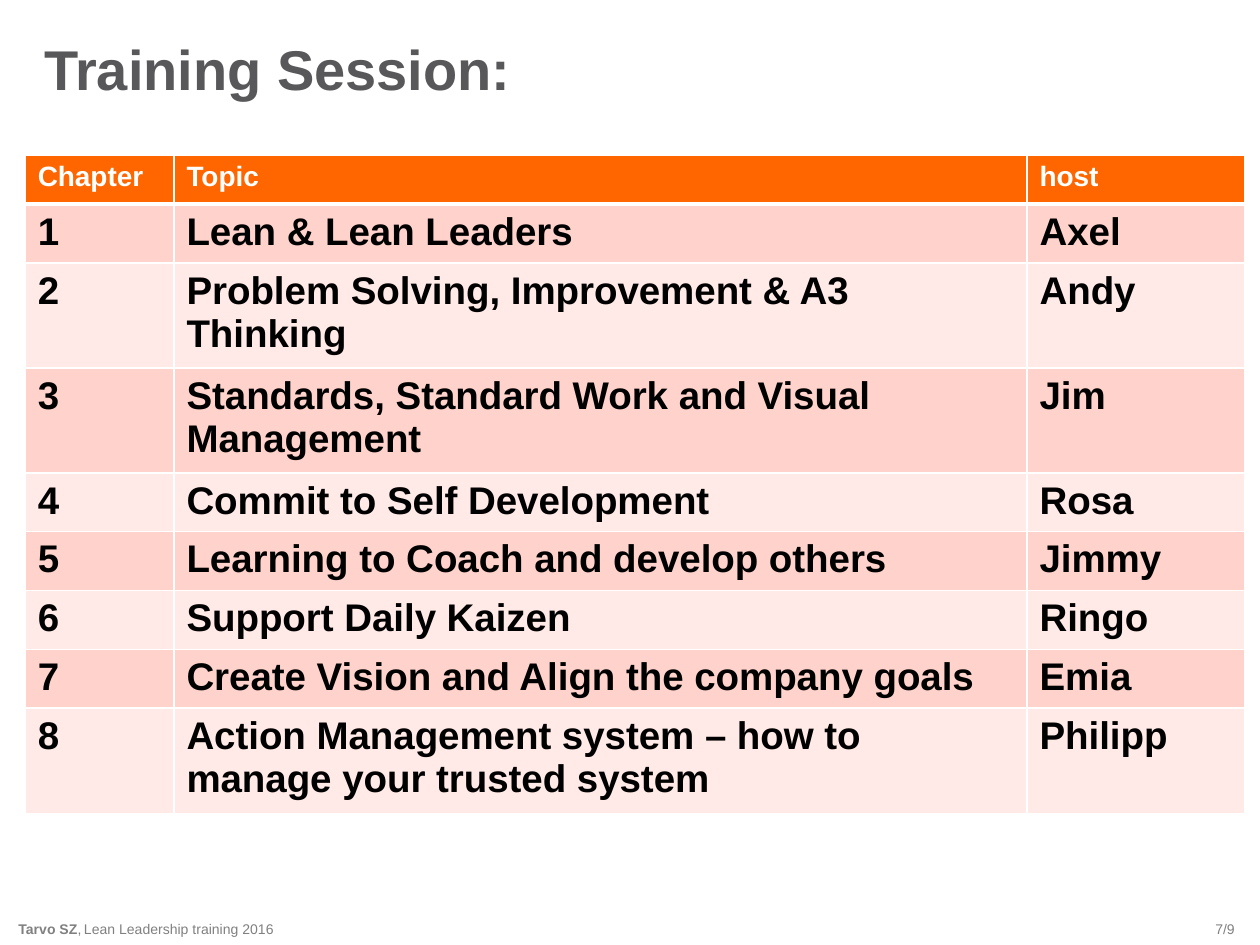
from lxml import etree
from pptx import Presentation
from pptx.dml.color import RGBColor
from pptx.enum import text
from pptx.oxml import ns
from pptx.util import Pt

FONT = "Arial"
GREY, WHITE, BLACK = "808080", "FFFFFF", "000000"
HEADER_FILL = "FF6600"
BAND_FILLS = ("FFD3CC", "FFEAE7")
HEADINGS = ("Chapter", "Topic", "host")
SESSIONS = (
    ("Lean & Lean Leaders", "Axel"),
    ("Problem Solving, Improvement & A3 Thinking", "Andy"),
    ("Standards, Standard Work and Visual Management", "Jim"),
    ("Commit to Self Development", "Rosa"),
    ("Learning to Coach and develop others", "Jimmy"),
    ("Support Daily Kaizen", "Ringo"),
    ("Create Vision and Align the company goals", "Emia"),
    ("Action Management system – how to manage your trusted system", "Philipp"),
)
TWO_LINE_CHAPTERS = (2, 3, 8)
COLUMN_WIDTHS = (85, 487.5, 124.5)
HEADER_HEIGHT, ONE_LINE, TWO_LINES = 28, 31.8, 56.4


def rgb(value):
    return RGBColor.from_string(value)


def add_run(paragraph, words, size, color, bold=False):
    run = paragraph.add_run()
    run.text = words
    run.font.name = FONT
    run.font.size = Pt(size)
    run.font.bold = bold
    run.font.color.rgb = rgb(color)


def add_label(slide, left, top, width, height, runs, size, color,
              align=text.PP_ALIGN.LEFT, inset_left=0, inset_right=0):
    """Add a one-paragraph text box; runs holds (words, bold) pairs."""
    frame = slide.shapes.add_textbox(
        Pt(left), Pt(top), Pt(width), Pt(height)).text_frame
    frame.word_wrap = True
    frame.vertical_anchor = text.MSO_ANCHOR.MIDDLE
    frame.margin_left, frame.margin_right = Pt(inset_left), Pt(inset_right)
    frame.margin_top = frame.margin_bottom = 0
    paragraph = frame.paragraphs[0]
    paragraph.alignment = align
    for words, bold in runs:
        add_run(paragraph, words, size, color, bold)
    return paragraph


def set_borders(cell, top, bottom):
    properties = cell._tc.get_or_add_tcPr()
    for side, width in (("L", 1), ("R", 1), ("T", top), ("B", bottom)):
        line = etree.SubElement(properties, ns.qn(f"a:ln{side}"), w=str(Pt(width)))
        fill = etree.SubElement(line, ns.qn("a:solidFill"))
        etree.SubElement(fill, ns.qn("a:srgbClr"), val=WHITE)


def fill_cell(cell, words, size, color, fill, top=1, bottom=1):
    set_borders(cell, top, bottom)
    cell.fill.solid()
    cell.fill.fore_color.rgb = rgb(fill)
    add_run(cell.text_frame.paragraphs[0], words, size, color, bold=True)


def add_schedule(slide, left, top):
    heights = [HEADER_HEIGHT] + [
        TWO_LINES if chapter in TWO_LINE_CHAPTERS else ONE_LINE
        for chapter in range(1, len(SESSIONS) + 1)]
    schedule = slide.shapes.add_table(
        len(heights), len(HEADINGS), Pt(left), Pt(top),
        Pt(sum(COLUMN_WIDTHS)), Pt(sum(heights))).table
    schedule.horz_banding = False
    for column, width in zip(schedule.columns, COLUMN_WIDTHS):
        column.width = Pt(width)
    for row, height in zip(schedule.rows, heights):
        row.height = Pt(height)

    # Header row, set off by a thicker rule
    for column, heading in enumerate(HEADINGS):
        fill_cell(schedule.cell(0, column), heading, 16, WHITE, HEADER_FILL, bottom=3)

    # One banded row per chapter
    for chapter, (topic, host) in enumerate(SESSIONS, start=1):
        band = BAND_FILLS[(chapter - 1) % 2]
        for column, words in enumerate((str(chapter), topic, host)):
            fill_cell(schedule.cell(chapter, column), words, 22, BLACK, band,
                      top=3 if chapter == 1 else 1)


def main():
    deck = Presentation()
    deck.slide_width, deck.slide_height = Pt(720), Pt(540)
    slide = deck.slides.add_slide(deck.slide_layouts[6])

    # Footer
    right = text.PP_ALIGN.RIGHT
    add_label(slide, 666, 522, 54, 18, [("7/9", False)], 8, GREY, right,
              inset_right=14.4)
    add_label(slide, 0, 522, 48, 18, [("Tarvo SZ", True), (",", False)], 8, GREY,
              right, inset_left=2.88, inset_right=1.44)
    add_label(slide, 48, 522, 588, 18,
              [("Lean Leadership training 2016", False)], 8, GREY)

    # Title
    title = add_label(slide, 25.2, 21.6, 532.8, 56.9,
                      [("Training Session:", True)], 32, "58585A")
    title.line_spacing = Pt(16)

    # Training schedule
    add_schedule(slide, 14.4, 88.6)

    deck.save("out.pptx")


if __name__ == "__main__":
    main()
